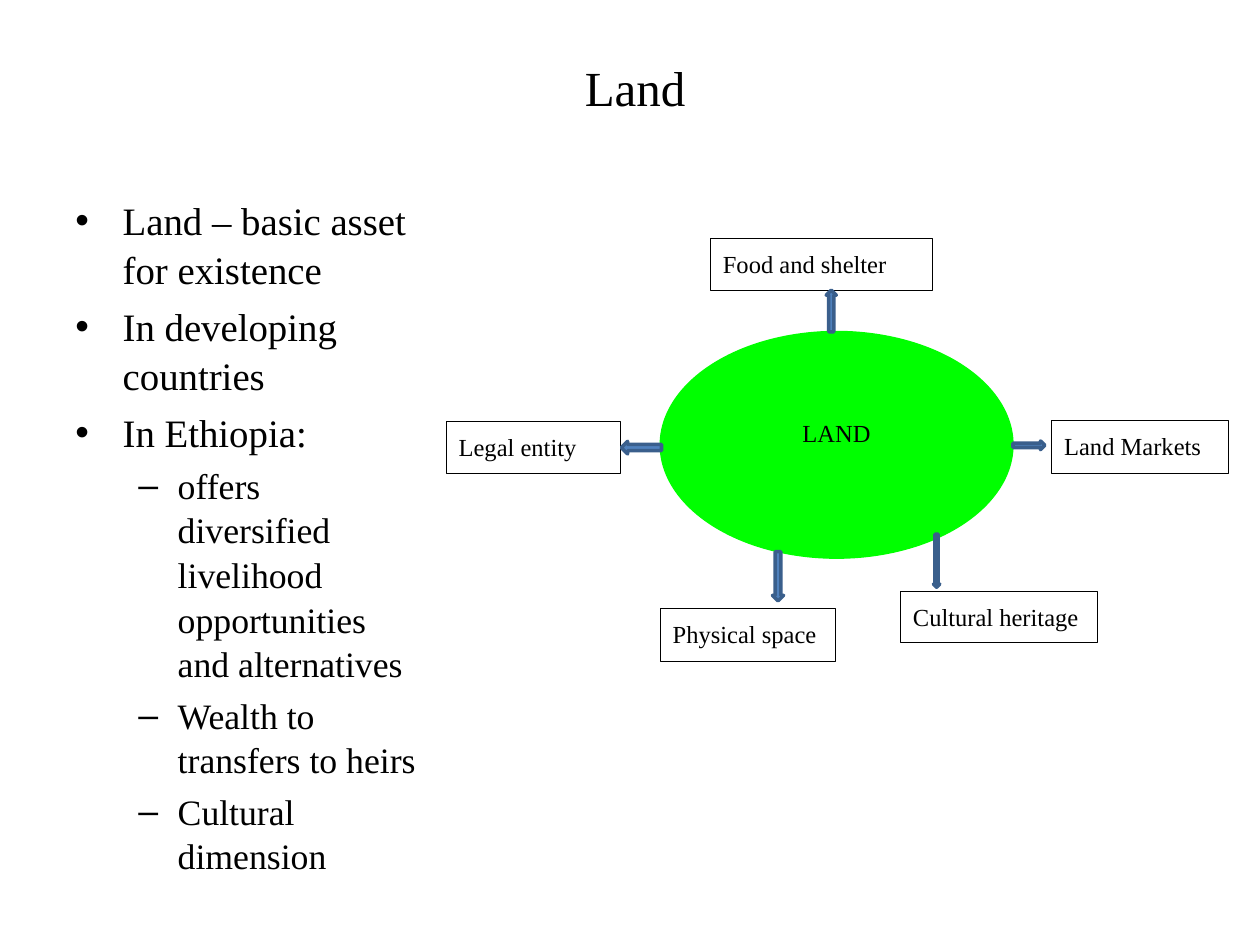
import pptx
import pptx.util
import pptx.dml.color
import pptx.enum.shapes
import pptx.enum.text
import pptx.oxml
import pptx.oxml.ns

Pt = pptx.util.Pt
Shape = pptx.enum.shapes.MSO_SHAPE
Align = pptx.enum.text.PP_ALIGN
Anchor = pptx.enum.text.MSO_ANCHOR


class LandSlide:
    """Draws styled elements on the current slide."""

    font = "Times New Roman"
    colours = {
        "text": "000000",
        "box": "FFFFFF",
        "land": "00FF00",
        "arrow": "4F81BD",
        "arrow_line": "3A5F8C",
    }
    levels = [("•", 27, 27, 22.2, 5), ("–", 58.5, 22.5, 20.4, 4)]

    def __init__(self, slide):
        self.slide = slide

    def colour(self, name):
        return pptx.dml.color.RGBColor.from_string(self.colours[name])

    def style(self, paragraph, size, align=Align.LEFT):
        paragraph.alignment = align
        for run in paragraph.runs:
            run.font.name = self.font
            run.font.size = Pt(size)
            run.font.color.rgb = self.colour("text")

    def text_box(self, left, top, width, height):
        shape = self.slide.shapes.add_textbox(Pt(left), Pt(top), Pt(width), Pt(height))
        shape.text_frame.word_wrap = True
        return shape.text_frame

    def title(self, text, *place):
        text_frame = self.text_box(*place)
        text_frame.vertical_anchor = Anchor.MIDDLE
        text_frame.text = text
        self.style(text_frame.paragraphs[0], 28, Align.CENTER)

    def bullets(self, items, *place):
        text_frame = self.text_box(*place)
        text_frame.text = "\n".join(text for level, text in items)
        for index, (level, text) in enumerate(items):
            paragraph = text_frame.paragraphs[index]
            mark, margin, hanging, size, gap = self.levels[level]
            paragraph.level = level
            paragraph.line_spacing = 1.04
            paragraph.space_before = Pt(gap if index else 0)
            properties = paragraph._p.get_or_add_pPr()
            properties.set("marL", str(Pt(margin)))
            properties.set("indent", str(-Pt(hanging)))
            for tag, key, value in (("buFont", "typeface", "Arial"), ("buChar", "char", mark)):
                bullet = pptx.oxml.parse_xml(f"<a:{tag} {pptx.oxml.ns.nsdecls('a')}/>")
                bullet.set(key, value)
                properties.append(bullet)
            self.style(paragraph, size)

    def shape(self, kind, fill, line, line_width, *place):
        shape = self.slide.shapes.add_shape(kind, *(Pt(value) for value in place))
        shape.shadow.inherit = False
        shape.fill.solid()
        shape.fill.fore_color.rgb = self.colour(fill)
        shape.line.color.rgb = self.colour(line)
        shape.line.width = Pt(line_width)
        return shape

    def label(self, shape, text, align=Align.LEFT, inset=3.6):
        text_frame = shape.text_frame
        text_frame.vertical_anchor = Anchor.TOP
        text_frame.margin_top = Pt(inset)
        text_frame.text = text
        paragraph = text_frame.paragraphs[0]
        paragraph.line_spacing = 1.15
        self.style(paragraph, 14, align)

    def land(self, text, *place):
        ellipse = self.shape(Shape.OVAL, "land", "land", 0.75, *place)
        self.label(ellipse, text, Align.CENTER, 28)

    def box(self, text, *place):
        self.label(self.shape(Shape.RECTANGLE, "box", "text", 0.5, *place), text)

    def arrow(self, kind, *place):
        self.shape(kind, "arrow", "arrow_line", 2, *place)


def main():
    presentation = pptx.Presentation()
    presentation.slide_width = Pt(720)
    presentation.slide_height = Pt(540)
    drawing = LandSlide(presentation.slides.add_slide(presentation.slide_layouts[6]))

    drawing.title("Land", 135, 21.6, 455.8, 56.2)
    drawing.bullets(
        [
            (0, "Land – basic asset for existence"),
            (0, "In developing countries"),
            (0, "In Ethiopia:"),
            (1, "offers diversified livelihood opportunities and alternatives"),
            (1, "Wealth to transfers to heirs"),
            (1, "Cultural dimension"),
        ],
        36, 108, 210, 384,
    )
    drawing.land("LAND", 377.3, 189.4, 201.6, 129.6)

    for text, *place in (
        ("Physical space", 377.3, 347.8, 100.1, 30.2),
        ("Cultural heritage", 514.6, 338.2, 112.3, 29),
        ("Land Markets", 601, 240.3, 101, 30.2),
        ("Legal entity", 255, 241, 99.4, 29.5),
        ("Food and shelter", 406, 136.2, 126.7, 29.7),
    ):
        drawing.box(text, *place)

    for kind, *place in (
        (Shape.RIGHT_ARROW, 578.9, 252, 18.2, 5),
        (Shape.UP_ARROW, 472.1, 165.8, 5.8, 23.8),
        (Shape.LEFT_ARROW, 355, 252.2, 23, 7.2),
        (Shape.DOWN_ARROW, 441.4, 315.2, 6.4, 28.2),
        (Shape.DOWN_ARROW, 533.4, 305.2, 3.6, 30.4),
    ):
        drawing.arrow(kind, *place)

    presentation.save("out.pptx")


if __name__ == "__main__":
    main()
